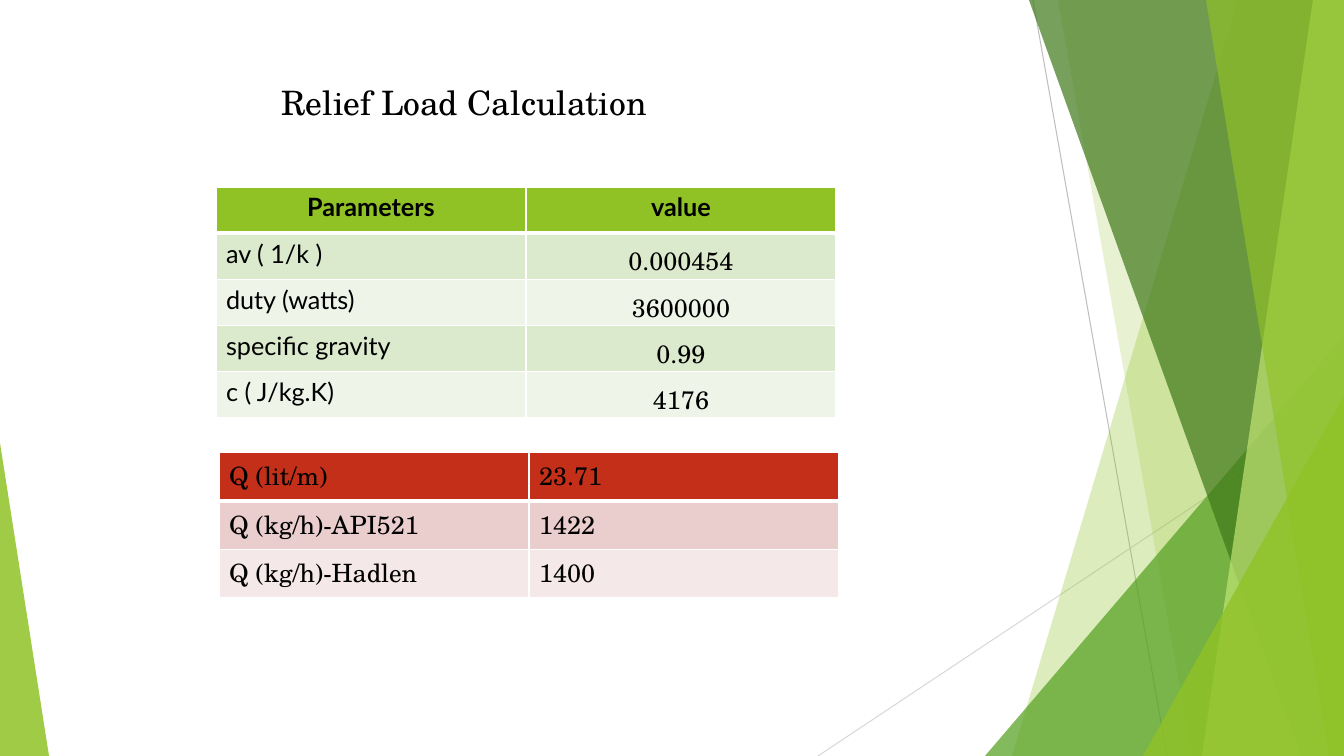
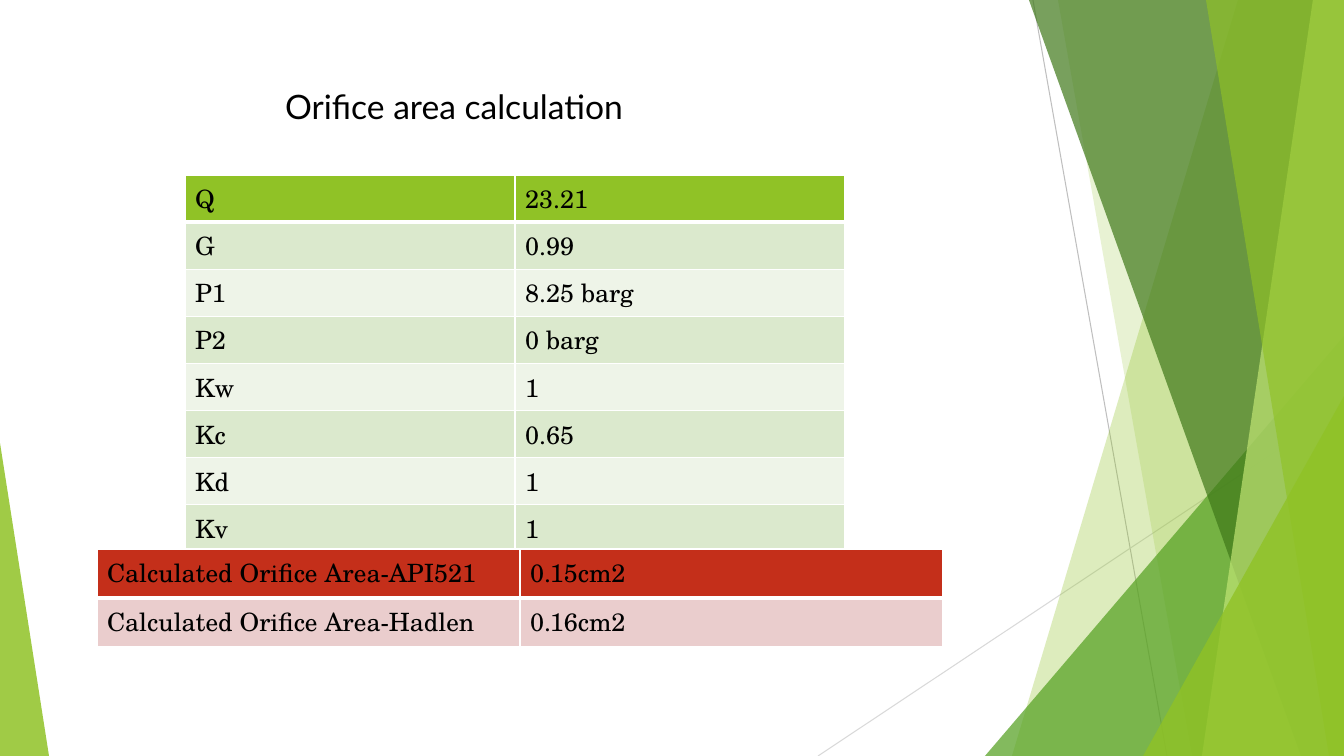
import pptx
import pptx.util
import pptx.oxml
import pptx.oxml.ns
import pptx.dml.color
import pptx.enum.shapes
import pptx.enum.text

PX = 9525 / 1.05
WIDE, HIGH = 1344, 756
HEX = {
    "lime": "90C226", "leaf": "54A021", "moss": "3F7819", "pale": "C0E474",
    "red": "C42F1A", "ink": "000000", "white": "FFFFFF",
    "near": "BFBFBF", "far": "D9D9D9",
}
GREEN = (HEX["lime"], "DBE9CD", "EEF4E8")
RED = (HEX["red"], "EACDCD", "F5E8E8")
SANS, SERIF = "Lato", "TeX Gyre Schola"
ALIGN = pptx.enum.text.PP_ALIGN
ANCHOR = pptx.enum.text.MSO_ANCHOR

LINES = [((1033, 0), (1167, HIGH), "near"), ((WIDE, 406), (818, HIGH), "far")]
BANDS = [
    ("cut", (1238, 1012), "lime", 30),
    ("cut", (1058, 1192), "lime", 20),
    ("tri", (985, 336, 359, 420, 1), "leaf", 72),
    ("cut", (1029, 1301), "moss", 70),
    ("cut", (1313, 1202), "pale", 70),
    ("cut", (1206, 1329), "lime", 65),
    ("tri", (1143, 396, 201, 360, 1), "lime", 80),
    ("tri", (0, 443, 49, 313, 0), "lime", 85),
]

LOADS = [("Parameters", "value"), ("av ( 1/k )", "0.000454"),
         ("duty (watts)", "3600000"), ("specific gravity", "0.99"),
         ("c ( J/kg.K)", "4176")]
FLOWS = [("Q (lit/m)", "23.71"), ("Q (kg/h)-API521", "1422"),
         ("Q (kg/h)-Hadlen", "1400")]
SIZING = [("Q", "23.21"), ("G", "0.99"), ("P1", "8.25 barg"),
          ("P2", "0 barg"), ("Kw", "1"), ("Kc", "0.65"), ("Kd", "1"),
          ("Kv", "1")]
AREAS = [("Calculated Orifice Area-API521", "0.15cm2"),
         ("Calculated Orifice Area-Hadlen", "0.16cm2")]


def emu(*nums):
    """Turn px into EMU."""
    return [round(num * PX) for num in nums]


def rgb(code):
    """Make a colour from a hex string."""
    return pptx.dml.color.RGBColor.from_string(code)


def sub(node, tag, **attrs):
    """Add an XML child with attributes."""
    kid = pptx.oxml.parse_xml(f"<{tag} {pptx.oxml.ns.nsdecls('a')}/>")
    for key, val in attrs.items():
        kid.set(key, str(val))
    node.append(kid)
    return kid


def style(para, face, size, bold=False):
    """Format the runs of a paragraph."""
    for run in para.runs:
        run.font.name, run.font.size = face, pptx.util.Pt(size)
        run.font.bold = bold
        run.font.color.rgb = rgb(HEX["ink"])


def rule(shapes, start, end, tone):
    """Draw one thin line."""
    line = shapes.add_connector(
        pptx.enum.shapes.MSO_CONNECTOR.STRAIGHT, *emu(*start, *end))
    line.line.color.rgb = rgb(HEX[tone])
    line.line.width = pptx.util.Pt(0.75)
    sub(line.element.spPr, "a:effectLst")
    return line


def cut(shapes, top, foot):
    """Build a band from a slanted edge to the right side."""
    pen = shapes.build_freeform(top, 0, scale=PX)
    pen.add_line_segments([(WIDE, 0), (WIDE, HIGH), (foot, HIGH)])
    return pen.convert_to_shape()


def tri(shapes, left, top, wide, high, tip):
    """Build a triangle with its tip at the given side."""
    shape = shapes.add_shape(
        pptx.enum.shapes.MSO_SHAPE.ISOSCELES_TRIANGLE,
        *emu(left, top, wide, high))
    shape.adjustments[0] = tip
    return shape


def band(shapes, kind, spot, tone, alpha):
    """Draw one clear band of colour."""
    shape = {"cut": cut, "tri": tri}[kind](shapes, *spot)
    shape.shadow.inherit = False
    shape.fill.solid()
    shape.fill.fore_color.rgb = rgb(HEX[tone])
    shape.line.fill.background()
    color = shape.element.spPr.find(".//" + pptx.oxml.ns.qn("a:srgbClr"))
    sub(color, "a:alpha", val=alpha * 1000)
    return shape


def decor(layout, slide):
    """Draw the shared bands and place them on the layout."""
    for hold in list(layout.placeholders)[1:]:
        hold.element.getparent().remove(hold.element)
    parts = [rule(slide.shapes, *item) for item in LINES]
    parts += [band(slide.shapes, *item) for item in BANDS]
    for part in parts:
        layout.shapes.element.append(part.element)


def title(slide, box, text, face):
    """Fill and place the slide title."""
    head = slide.shapes.title
    head.left, head.top, head.width, head.height = emu(*box)
    frame = head.text_frame
    frame.text = text
    frame.vertical_anchor = ANCHOR.MIDDLE
    frame.paragraphs[0].alignment = ALIGN.LEFT
    style(frame.paragraphs[0], face, 24)


def edge(cell, top, foot):
    """Give a cell white borders ahead of its fill."""
    props = cell._tc.get_or_add_tcPr()
    sides = zip(("a:lnL", "a:lnR", "a:lnT", "a:lnB"), (1, 1, top, foot))
    for spot, (tag, width) in enumerate(sides):
        line = sub(props, tag, w=width * 12700)
        sub(sub(line, "a:solidFill"), "a:srgbClr", val=HEX["white"])
        props.insert(spot, line)


def grid(slide, box, rows, tones):
    """Draw a table of equal cells with a strong top row."""
    left, top, wide, high = emu(*box)
    table = slide.shapes.add_table(
        len(rows), len(rows[0]), left, top, wide, high).table
    table.first_row = table.horz_banding = False
    for row, texts in enumerate(rows):
        tone = tones[0] if row == 0 else tones[2 - row % 2]
        for col, text in enumerate(texts):
            cell = table.cell(row, col)
            cell.text_frame.text = text
            style(cell.text_frame.paragraphs[0], SERIF, 18)
            cell.fill.solid()
            cell.fill.fore_color.rgb = rgb(tone)
            edge(cell, 3 if row == 1 else 1, 3 if row == 0 else 1)
    return table


def loads(slide, box):
    """Draw the table of named values."""
    table = grid(slide, box, LOADS, GREEN)
    for row in range(len(LOADS)):
        name, value = table.cell(row, 0), table.cell(row, 1)
        for cell in (name, value):
            para = cell.text_frame.paragraphs[0]
            if row == 0 or cell is value:
                para.alignment = ALIGN.CENTER
            if row == 0 or cell is name:
                style(para, SANS, 18, row == 0)
        if row:
            value.vertical_anchor = ANCHOR.BOTTOM
            value.margin_left = value.margin_right = emu(1)[0]
            value.margin_top, value.margin_bottom = emu(1, 0)


def relief(slide):
    """Fill the relief load slide."""
    title(slide, (271, 77, 600, 50), "Relief Load Calculation", SERIF)
    loads(slide, (216, 187, 620, 231))
    grid(slide, (219, 452, 620, 146), FLOWS, RED)


def orifice(slide):
    """Fill the orifice area slide."""
    title(slide, (275, 81, 600, 50), "Orifice area calculation", SANS)
    grid(slide, (185, 175, 660, 376), SIZING, GREEN)
    grid(slide, (97, 549, 846, 98), AREAS, RED)


def main():
    """Build and save the slides."""
    deck = pptx.Presentation()
    deck.slide_width, deck.slide_height = emu(WIDE, HIGH)
    layout = deck.slide_layouts[5]
    for order, fill in enumerate((relief, orifice)):
        slide = deck.slides.add_slide(layout)
        if order == 0:
            decor(layout, slide)
        fill(slide)
    deck.save("out.pptx")


if __name__ == "__main__":
    main()
